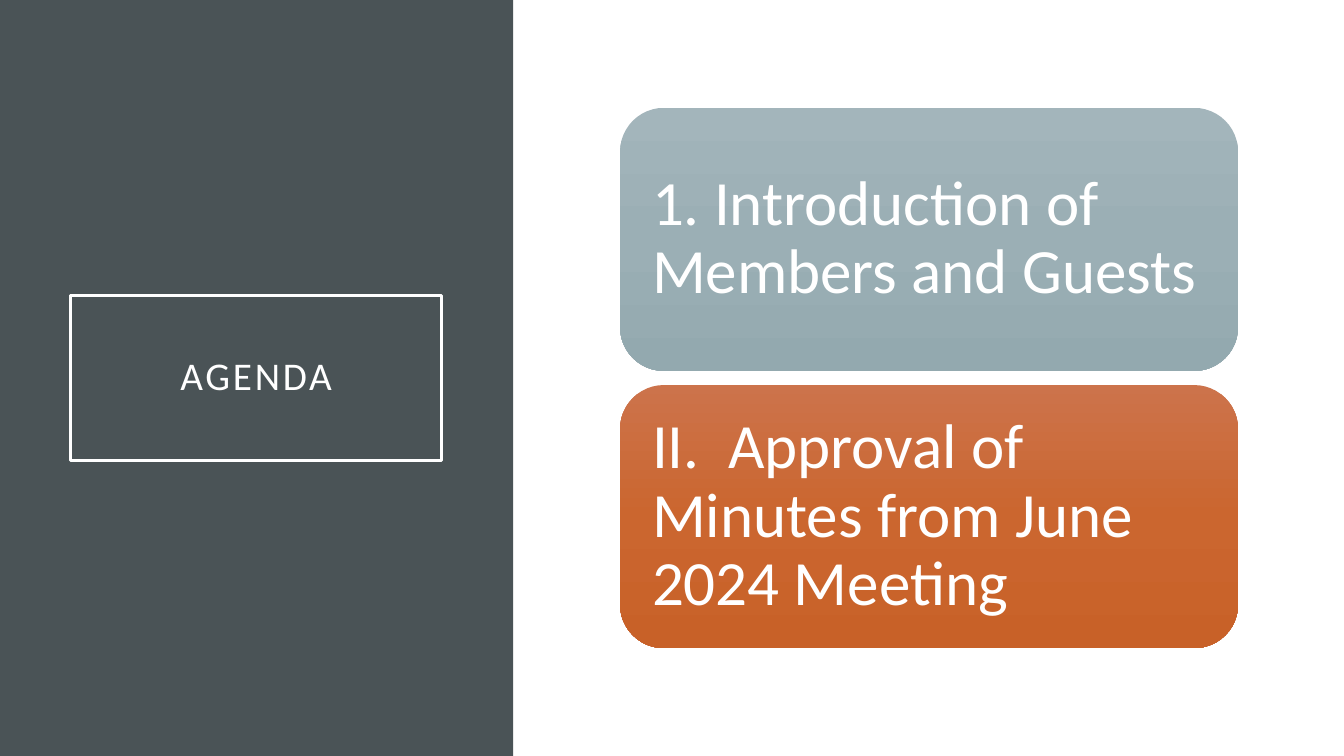
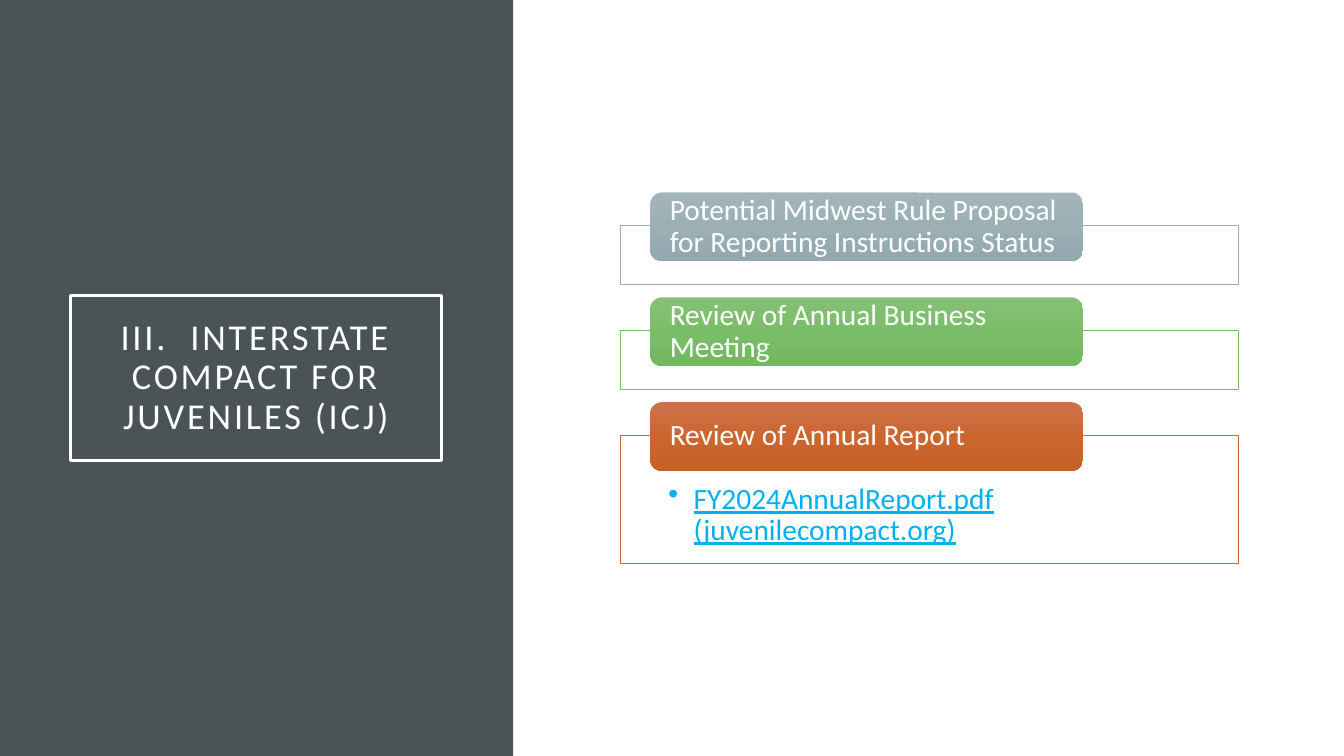
import copy
import dataclasses

import lxml.etree
import pptx
import pptx.dml.color
import pptx.enum.shapes
import pptx.enum.text
import pptx.oxml.ns
import pptx.util


@dataclasses.dataclass(frozen=True)
class Theme:
    font: str = "Calibri"
    white: str = "FFFFFF"
    panel: str = "4A5356"
    link: str = "00B0F0"
    grey: tuple = ("A3B5BB", "9BAFB5", "93A9AF")
    green: tuple = ("85C076", "7ABD68", "73B960")
    orange: tuple = ("CC734B", "CB662F", "C86128")
    agenda_title_size: int = 28
    topic_title_size: int = 26
    card_size: int = 45
    row_size: int = 21


THEME = Theme()
PX = pptx.util.Inches(1) // 100
SLIDE_WIDTH, SLIDE_HEIGHT = 1333, 750
CONTENT_LEFT, CONTENT_WIDTH = 615, 613
SHAPES = pptx.enum.shapes.MSO_SHAPE
ALIGN = pptx.enum.text.PP_ALIGN
ANCHOR = pptx.enum.text.MSO_ANCHOR
rgb = pptx.dml.color.RGBColor.from_string
qn = pptx.oxml.ns.qn


def add_box(slide, kind, left, top, width, height, fill=None, line=None, line_width=0.5):
    shape = slide.shapes.add_shape(kind, left * PX, top * PX, width * PX, height * PX)
    shape.shadow.inherit = False
    if fill is None:
        shape.fill.background()
    elif isinstance(fill, str):
        shape.fill.solid()
        shape.fill.fore_color.rgb = rgb(fill)
    else:
        shape.fill.gradient()
        shape.fill.gradient_angle = 270
        stop_list = shape._element.spPr.find(".//" + qn("a:gsLst"))
        stop_list.insert(1, copy.deepcopy(stop_list[0]))
        for stop, color, position in zip(shape.fill.gradient_stops, fill, (0, 0.5, 1)):
            stop.color.rgb = rgb(color)
            stop.position = position
    if line is None:
        shape.line.fill.background()
    else:
        shape.line.color.rgb = rgb(line)
        shape.line.width = pptx.util.Pt(line_width)
    return shape


def set_text(shape, text, size, margins, color=THEME.white, align=ALIGN.LEFT, anchor=ANCHOR.MIDDLE):
    frame = shape.text_frame
    frame.word_wrap = True
    frame.vertical_anchor = anchor
    frame.margin_left, frame.margin_top, frame.margin_right, frame.margin_bottom = (
        margin * PX for margin in margins
    )
    paragraph = frame.paragraphs[0]
    paragraph.text = text
    paragraph.alignment = align
    paragraph.line_spacing = 0.9
    paragraph.font.name = THEME.font
    paragraph.font.size = pptx.util.Pt(size)
    paragraph.font.color.rgb = rgb(color)
    return paragraph


presentation = pptx.Presentation()
presentation.slide_width = SLIDE_WIDTH * PX
presentation.slide_height = SLIDE_HEIGHT * PX

slides = []
for title, title_size in (
    ("AGENDA", THEME.agenda_title_size),
    ("III.  INTERSTATE COMPACT FOR JUVENILES (ICJ)", THEME.topic_title_size),
):
    slide = presentation.slides.add_slide(presentation.slide_layouts[6])
    add_box(slide, SHAPES.RECTANGLE, 0, 0, 509, SLIDE_HEIGHT, THEME.panel)
    title_box = add_box(
        slide, SHAPES.RECTANGLE, 70, 293, 368, 164, line=THEME.white, line_width=2.5
    )
    paragraph = set_text(title_box, title, title_size, (20, 20, 20, 20), align=ALIGN.CENTER)
    paragraph.runs[0]._r.get_or_add_rPr().set("spc", "200")
    slides.append(slide)

agenda_slide, topic_slide = slides

CARD_TOP, CARD_HEIGHT, CARD_GAP = 107, 261, 14
cards = (
    ("1. Introduction of Members and Guests", THEME.grey),
    ("II.  Approval of Minutes from June 2024 Meeting", THEME.orange),
)
for index, (text, gradient) in enumerate(cards):
    top = CARD_TOP + index * (CARD_HEIGHT + CARD_GAP)
    card = add_box(
        agenda_slide, SHAPES.ROUNDED_RECTANGLE,
        CONTENT_LEFT, top, CONTENT_WIDTH, CARD_HEIGHT, gradient,
    )
    set_text(card, text, THEME.card_size, (19, 19, 19, 19))

TAB_INDENT, TAB_WIDTH, TAB_HEIGHT = 30, 429, 68
FRAME_DROP, ROW_GAP = 33, 13
rows = (
    ("Potential Midwest Rule Proposal for Reporting Instructions Status", THEME.grey, 58, None),
    ("Review of Annual Business Meeting", THEME.green, 58, None),
    (
        "Review of Annual Report", THEME.orange, 127,
        "FY2024AnnualReport.pdf (juvenilecompact.org)",
    ),
)
tab_top = 191
for text, gradient, frame_height, detail in rows:
    frame_top = tab_top + FRAME_DROP
    row_frame = add_box(
        topic_slide, SHAPES.RECTANGLE,
        CONTENT_LEFT, frame_top, CONTENT_WIDTH, frame_height, THEME.white, gradient[1],
    )
    if detail:
        paragraph = set_text(
            row_frame, detail, THEME.row_size, (48, 48, 48, 16), THEME.link, anchor=ANCHOR.TOP
        )
        paragraph.font.underline = True
        properties = paragraph._p.get_or_add_pPr()
        properties.set("marL", str(25 * PX))
        properties.set("indent", str(-25 * PX))
        bullet = lxml.etree.Element(qn("a:buChar"), char="•")
        properties.find(qn("a:defRPr")).addprevious(bullet)
    tab = add_box(
        topic_slide, SHAPES.ROUNDED_RECTANGLE,
        CONTENT_LEFT + TAB_INDENT, tab_top, TAB_WIDTH, TAB_HEIGHT, gradient,
    )
    set_text(tab, text, THEME.row_size, (16, 0, 16, 0))
    tab_top = frame_top + frame_height + ROW_GAP

presentation.save("out.pptx")
